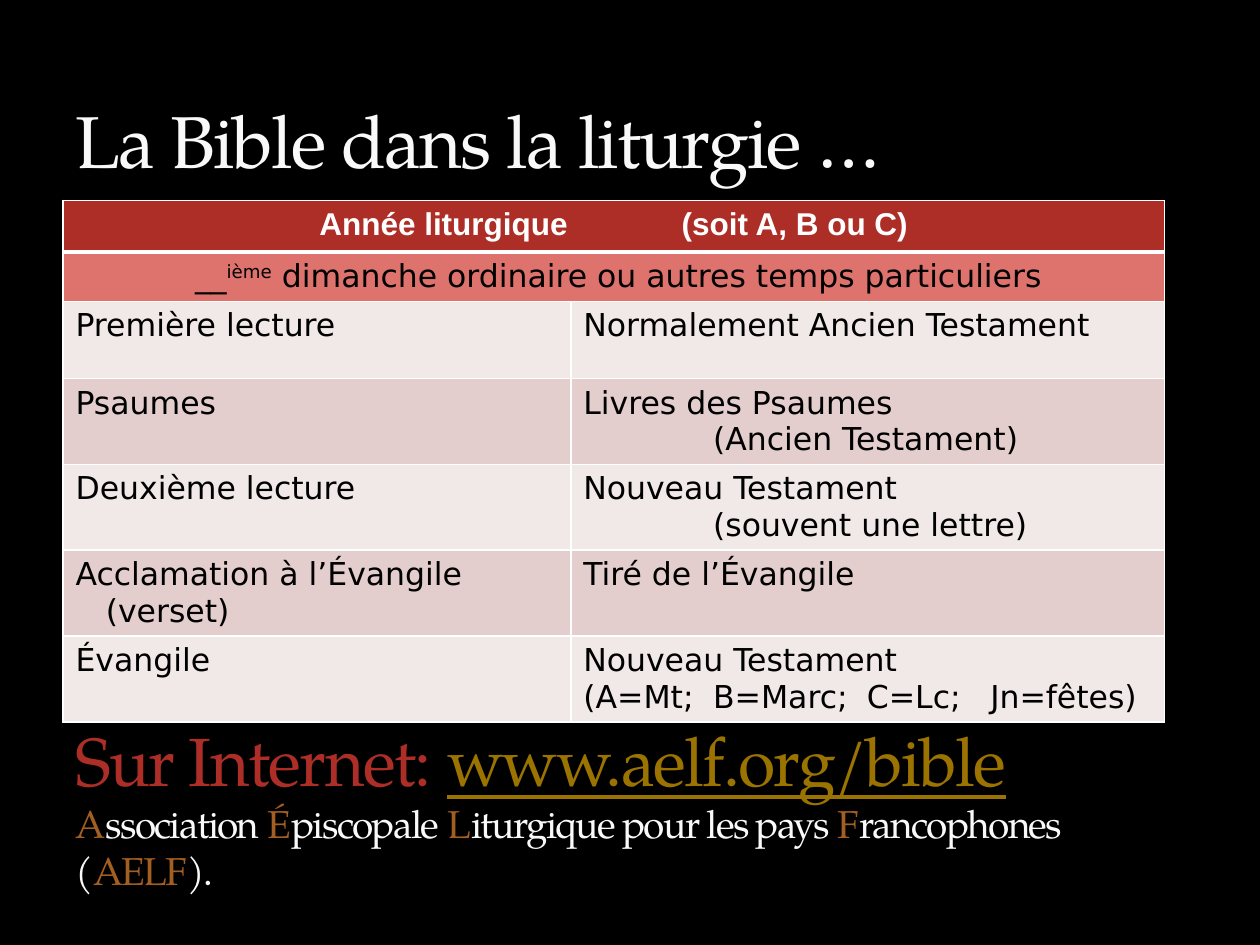
import dataclasses

import pptx
import pptx.dml.color
import pptx.enum.text
import pptx.oxml
import pptx.oxml.ns
import pptx.util

ALIGN = pptx.enum.text.PP_ALIGN
NS = pptx.oxml.ns.nsdecls("a")


@dataclasses.dataclass(frozen=True)
class Theme:
    background: str = "000000"
    light: str = "F9F9F9"
    white: str = "FFFFFF"
    ink: str = "000000"
    red: str = "AD2E27"
    rose: str = "DE736D"
    bands: tuple = ("F1E8E8", "E3CDCD")
    link: str = "9B7300"
    initial: str = "A35E21"
    outline: str = "6B4932"
    serif: str = "TeX Gyre Pagella"
    sans: str = "DejaVu Sans"
    header: str = "Arial"
    title_size: float = 42
    web_size: float = 38.9
    note_size: float = 22.2
    cell_size: float = 18


THEME = Theme()


def color(value):
    return pptx.dml.color.RGBColor.from_string(value)


def add_span(para, text, font=THEME.sans, size=THEME.cell_size, ink=THEME.ink, bold=False,
             underline=False, spacing=None, raised=None, outline=None):
    """Append text to a paragraph; spacing is in points, raised in percent."""
    span = para.add_run()
    span.text = text
    span.font.name, span.font.size = font, pptx.util.Pt(size)
    span.font.bold, span.font.underline = bold, underline
    span.font.color.rgb = color(ink)
    properties = span.font._element
    if spacing is not None:
        properties.set("spc", str(int(spacing * 100)))
    if raised:
        properties.set("baseline", str(raised * 1000))
    if outline:
        properties.insert(0, pptx.oxml.parse_xml(
            f'<a:ln {NS} w="3175"><a:solidFill><a:srgbClr val="{outline}">'
            '<a:alpha val="25000"/></a:srgbClr></a:solidFill></a:ln>'))


class SlideBuilder:
    def __init__(self, deck, theme):
        self.theme = theme
        self.width, self.height = deck.slide_width, deck.slide_height
        self.slide = deck.slides.add_slide(deck.slide_layouts[6])
        self.slide.background.fill.solid()
        self.slide.background.fill.fore_color.rgb = color(theme.background)

    def place(self, left, top, width, height):
        """Turn shares of the slide into lengths."""
        return (int(left * self.width), int(top * self.height),
                int(width * self.width), int(height * self.height))

    def heading(self, area, paragraphs):
        """Bottom-anchored serif text; a paragraph is (size, [(text, format), ...])."""
        frame = self.slide.shapes.add_textbox(*self.place(*area)).text_frame
        frame.word_wrap = True
        frame.vertical_anchor = pptx.enum.text.MSO_ANCHOR.BOTTOM
        for index, (size, spans) in enumerate(paragraphs):
            para = frame.add_paragraph() if index else frame.paragraphs[0]
            for text, style in spans:
                add_span(para, text, font=self.theme.serif, size=size, spacing=-1,
                         outline=self.theme.outline, **style)

    def table(self, area, columns, rows):
        """Columns are shares of the table width, rows of its height."""
        frame = self.slide.shapes.add_table(len(rows), len(columns), *self.place(*area))
        table = frame.table
        for column, share in zip(table.columns, columns):
            column.width = int(share * frame.width)
        for row, share in zip(table.rows, rows):
            row.height = int(share * frame.height)
        return table

    def paint(self, cell, fill, top=1, bottom=1):
        cell.fill.solid()
        cell.fill.fore_color.rgb = color(fill)
        widths = {"lnL": 1, "lnR": 1, "lnT": top, "lnB": bottom}
        for index, (side, width) in enumerate(widths.items()):
            cell._tc.get_or_add_tcPr().insert(index, pptx.oxml.parse_xml(
                f'<a:{side} {NS} w="{pptx.util.Pt(width)}"><a:solidFill>'
                f'<a:srgbClr val="{self.theme.white}"/></a:solidFill></a:{side}>'))

    def banner(self, table, row, fill, spans, **borders):
        """A centred row across all columns."""
        cells = list(table.rows[row].cells)
        for cell in cells:
            self.paint(cell, fill, **borders)
        cells[0].merge(cells[-1])
        para = cells[0].text_frame.paragraphs[0]
        para.alignment = ALIGN.CENTER
        for text, style in spans:
            add_span(para, text, **style)

    def entry(self, cell, fill, lines):
        """Each line is (text, indent in inches, tab stops in inches)."""
        self.paint(cell, fill)
        for index, (text, indent, stops) in enumerate(lines):
            para = cell.text_frame.add_paragraph() if index else cell.text_frame.paragraphs[0]
            properties = para._p.get_or_add_pPr()
            if indent:
                properties.set("marL", str(pptx.util.Inches(indent)))
                properties.set("indent", "0")
            if stops:
                tabs = "".join(f'<a:tab pos="{pptx.util.Inches(stop)}" algn="l"/>' for stop in stops)
                properties.append(pptx.oxml.parse_xml(f"<a:tabLst {NS}>{tabs}</a:tabLst>"))
            add_span(para, text)


def line(text, indent=0, stops=()):
    return text, indent, stops


READINGS = [
    ([line("Première lecture")], [line("Normalement Ancien Testament")]),
    ([line("Psaumes")], [line("Livres des Psaumes"), line("(Ancien Testament)", 1.03)]),
    ([line("Deuxième lecture")], [line("Nouveau Testament"), line("(souvent une lettre)", 1.03)]),
    ([line("Acclamation à l’Évangile"), line("(verset)", 0.24)], [line("Tiré de l’Évangile")]),
    ([line("Évangile")], [line("Nouveau Testament"),
                          line("(A=Mt;\tB=Marc;\tC=Lc;\tJn=fêtes)", stops=(1.03, 2.25, 3.23))]),
]


def main():
    deck = pptx.Presentation()
    deck.slide_width, deck.slide_height = pptx.util.Inches(10), pptx.util.Inches(7.5)
    theme = THEME
    builder = SlideBuilder(deck, theme)
    light, initial = {"ink": theme.light}, {"ink": theme.initial}

    # Table of readings: two banners, then banded rows
    banner, reading = 0.41 / 4.22, 0.68 / 4.22
    table = builder.table((0.05, 1.59 / 7.5, 0.9, 4.22 / 7.5), (4.03 / 9, 4.97 / 9),
                          [banner] * 2 + [reading] * len(READINGS))
    header = {"font": theme.header, "ink": theme.white, "bold": True}
    builder.banner(table, 0, theme.red, [
        ("Année liturgique", header),
        (" ", {**header, "spacing": 60}),
        ("(soit A, B ou C)", header)], bottom=3)
    builder.banner(table, 1, theme.rose, [
        (" __", {}), ("ième", {"raised": 30}),
        (" dimanche ordinaire ou autres temps particuliers", {})], top=3)
    for index, pair in enumerate(READINGS):
        for cell, lines in zip(table.rows[index + 2].cells, pair):
            builder.entry(cell, theme.bands[index % 2], lines)

    # Title
    builder.heading((0.05, 0.17 / 7.5, 0.9, 1.33 / 7.5), [
        (theme.title_size, [("La Bible dans la liturgie …", light)])])

    # Web address and the name behind its initials
    builder.heading((0.05, 5.81 / 7.5, 0.9, 1.33 / 7.5), [
        (theme.web_size, [("Sur Internet: ", {"ink": theme.red}),
                          ("www.aelf.org/bible", {"ink": theme.link, "underline": True})]),
        (theme.note_size, [("A", initial), ("ssociation ", light),
                           ("É", initial), ("piscopale ", light),
                           ("L", initial), ("iturgique pour les pays ", light),
                           ("F", initial), ("rancophones (", light),
                           ("AELF", initial), (").", light)])])

    deck.save("out.pptx")


if __name__ == "__main__":
    main()
